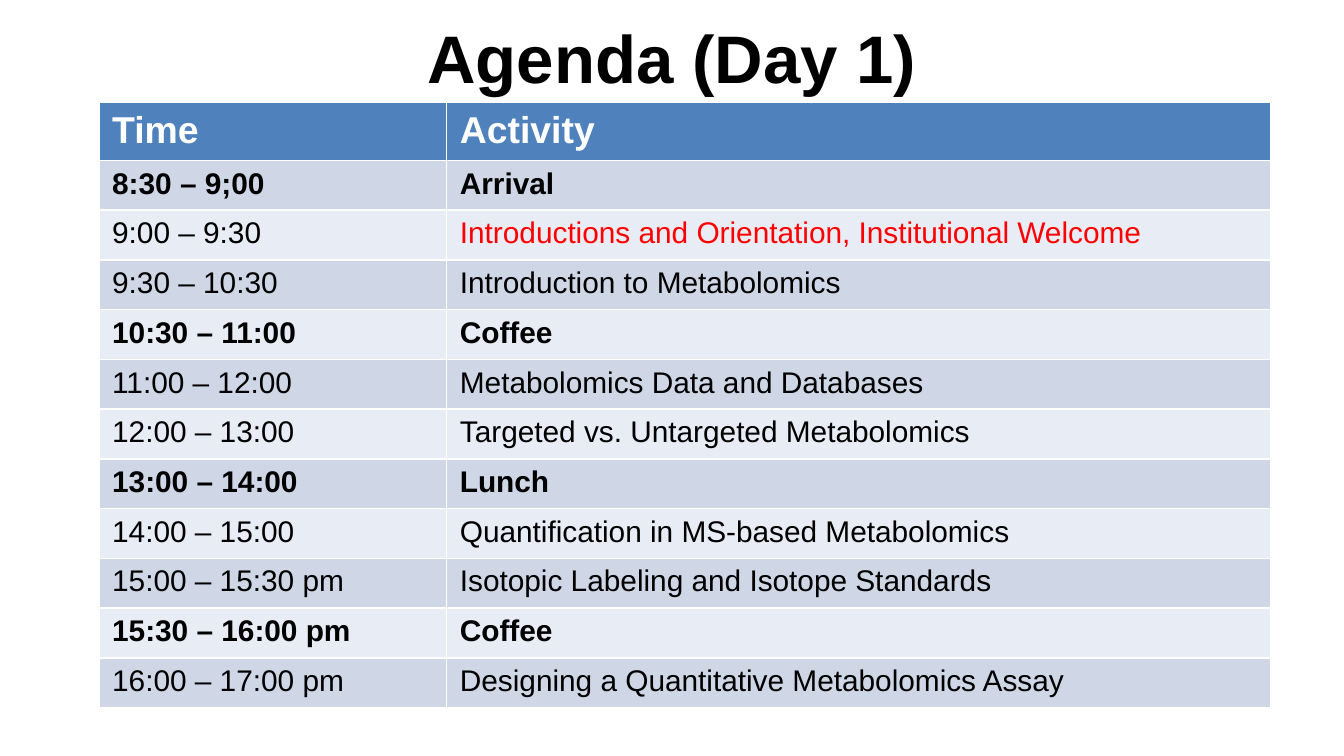
from pptx import Presentation
from pptx.dml.color import RGBColor
from pptx.enum.text import MSO_ANCHOR, PP_ALIGN
from pptx.util import Pt

BLACK = RGBColor(0x00, 0x00, 0x00)
WHITE = RGBColor(0xFF, 0xFF, 0xFF)
RED = RGBColor(0xFF, 0x00, 0x00)
HEADER_BLUE = RGBColor(0x4F, 0x81, 0xBD)
BAND_DARK = RGBColor(0xCF, 0xD7, 0xE7)
BAND_LIGHT = RGBColor(0xE8, 0xEC, 0xF4)

AGENDA = [
    ("Time", "Activity"),
    ("8:30 – 9;00", "Arrival"),
    ("9:00 – 9:30", "Introductions and Orientation, Institutional Welcome"),
    ("9:30 – 10:30", "Introduction to Metabolomics"),
    ("10:30 – 11:00", "Coffee"),
    ("11:00 – 12:00", "Metabolomics Data and Databases"),
    ("12:00 – 13:00", "Targeted vs. Untargeted Metabolomics"),
    ("13:00 – 14:00", "Lunch"),
    ("14:00 – 15:00", "Quantification in MS-based Metabolomics"),
    ("15:00 – 15:30 pm", "Isotopic Labeling and Isotope Standards"),
    ("15:30 – 16:00 pm", "Coffee"),
    ("16:00 – 17:00 pm", "Designing a Quantitative Metabolomics Assay"),
]
BREAKS = {"Arrival", "Coffee", "Lunch"}
HEADER_HEIGHT, ROW_HEIGHT = 31, 26.65
TIME_WIDTH, ACTIVITY_WIDTH = 186.3, 441.5


def set_font(paragraph, size, color, bold):
    font = paragraph.font
    font.name = "Arial"
    font.size = Pt(size)
    font.bold = bold
    font.color.rgb = color


prs = Presentation()
prs.slide_width, prs.slide_height = Pt(720), Pt(405)
slide = prs.slides.add_slide(prs.slide_layouts[5])

title = slide.shapes.title
title.left, title.top, title.width, title.height = Pt(36), Pt(-3.6), Pt(648), Pt(67.5)
title.text_frame.text = "Agenda (Day 1)"
title.text_frame.vertical_anchor = MSO_ANCHOR.MIDDLE
heading = title.text_frame.paragraphs[0]
heading.alignment = PP_ALIGN.CENTER
set_font(heading, 36, BLACK, True)

# The default table style supplies the white rules between cells.
schedule = slide.shapes.add_table(
    len(AGENDA), 2, Pt(52.9), Pt(55), Pt(TIME_WIDTH + ACTIVITY_WIDTH),
    Pt(HEADER_HEIGHT + ROW_HEIGHT * (len(AGENDA) - 1))).table
schedule.columns[0].width = Pt(TIME_WIDTH)
schedule.columns[1].width = Pt(ACTIVITY_WIDTH)

for row, entry in enumerate(AGENDA):
    is_header = row == 0
    schedule.rows[row].height = Pt(HEADER_HEIGHT if is_header else ROW_HEIGHT)
    band = HEADER_BLUE if is_header else BAND_DARK if row % 2 else BAND_LIGHT
    for column, wording in enumerate(entry):
        cell = schedule.cell(row, column)
        cell.text = wording
        cell.fill.solid()
        cell.fill.fore_color.rgb = band
        color = WHITE if is_header else RED if "Welcome" in wording else BLACK
        set_font(cell.text_frame.paragraphs[0], 20 if is_header else 16, color,
                 is_header or entry[1] in BREAKS)

prs.save("out.pptx")
